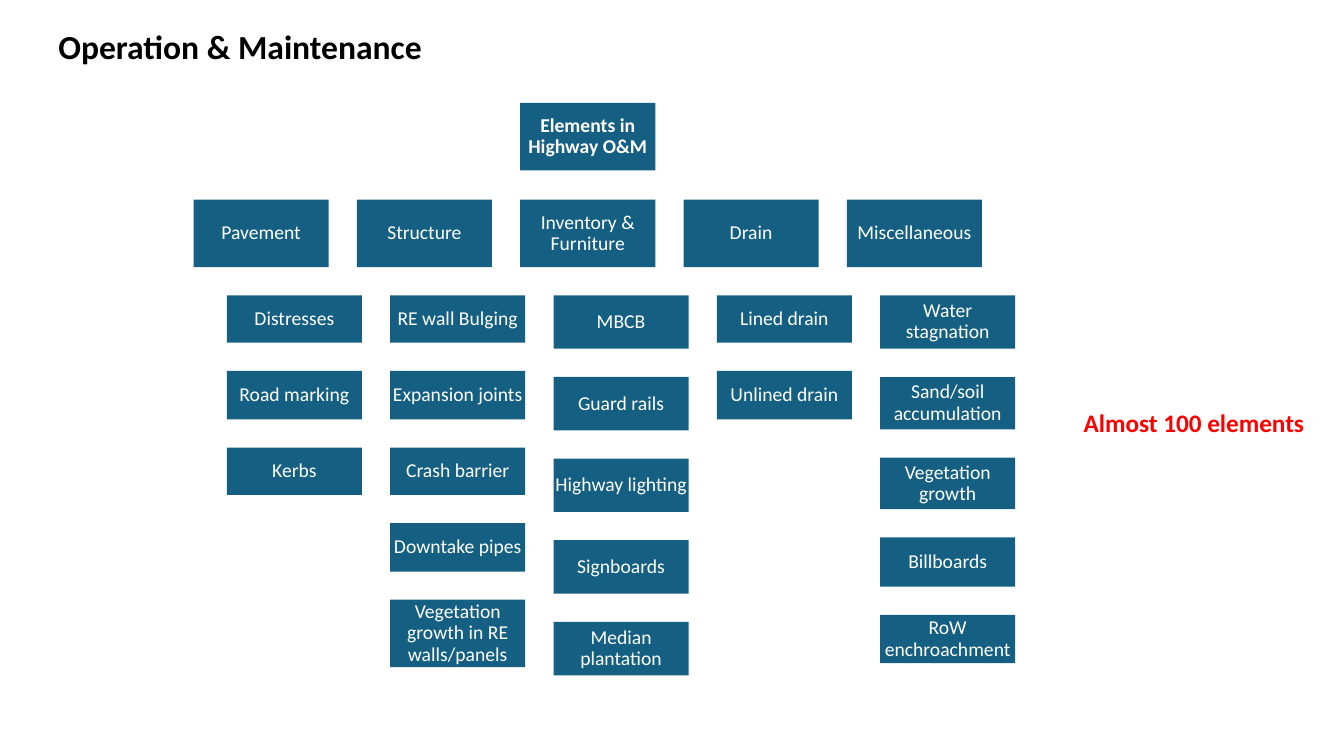
from pptx import Presentation
from pptx.dml.color import RGBColor
from pptx.enum import shapes, text
from pptx.util import Inches, Pt

BLACK = RGBColor(0x00, 0x00, 0x00)
WHITE = RGBColor(0xFF, 0xFF, 0xFF)
RED = RGBColor(0xFF, 0x00, 0x00)
TEAL = RGBColor(0x15, 0x60, 0x82)

BOX_WIDTH = 1.34
BOX_HEIGHT = 0.67
GAP = 0.28
ROOT_LEFT = 5.16
ROOT_TOP = 1.02
CHILD_INDENT = 0.33

CATEGORIES = [
    ("Pavement", [("Distresses", 0.47), ("Road marking", 0.48), ("Kerbs", 0.47)]),
    ("Structure", [
        ("RE wall Bulging", 0.47),
        ("Expansion joints", 0.48),
        ("Crash barrier", 0.47),
        ("Downtake pipes", 0.48),
        ("Vegetation growth in RE walls/panels", BOX_HEIGHT),
    ]),
    ("Inventory & Furniture", [
        ("MBCB", 0.53),
        ("Guard rails", 0.53),
        ("Highway lighting", 0.53),
        ("Signboards", 0.53),
        ("Median plantation", 0.53),
    ]),
    ("Drain", [("Lined drain", 0.47), ("Unlined drain", 0.48)]),
    ("Miscellaneous", [
        ("Water stagnation", 0.53),
        ("Sand/soil accumulation", 0.52),
        ("Vegetation growth", 0.51),
        ("Billboards", 0.49),
        ("RoW enchroachment", 0.48),
    ]),
]


def write_text(frame, wording, size=14, color=WHITE, bold=False,
               align=text.PP_ALIGN.LEFT, line_spacing=1.0):
    """Write one formatted paragraph into a text frame."""
    paragraph = frame.paragraphs[0]
    paragraph.alignment = align
    paragraph.line_spacing = line_spacing
    run = paragraph.add_run()
    run.text = wording
    run.font.name = "Calibri"
    run.font.size = Pt(size)
    run.font.bold = bold
    run.font.color.rgb = color


def add_label(slide, wording, left, top, width, height, **style):
    """Add a single-line text box."""
    frame = slide.shapes.add_textbox(
        Inches(left), Inches(top), Inches(width), Inches(height)).text_frame
    frame.word_wrap = False
    frame.auto_size = text.MSO_AUTO_SIZE.SHAPE_TO_FIT_TEXT
    write_text(frame, wording, **style)


def add_box(slide, wording, left, top, height=BOX_HEIGHT, bold=False):
    """Add a filled chart box with centred text."""
    box = slide.shapes.add_shape(
        shapes.MSO_SHAPE.RECTANGLE,
        Inches(left), Inches(top), Inches(BOX_WIDTH), Inches(height))
    box.shadow.inherit = False
    box.fill.solid()
    box.fill.fore_color.rgb = TEAL
    box.line.fill.background()
    frame = box.text_frame
    frame.word_wrap = True
    frame.vertical_anchor = text.MSO_ANCHOR.MIDDLE
    frame.margin_left = frame.margin_right = Inches(0.01)
    frame.margin_top = frame.margin_bottom = Inches(0.01)
    write_text(frame, wording, bold=bold, align=text.PP_ALIGN.CENTER,
               line_spacing=0.9)


def add_category(slide, name, elements, left, top):
    """Add a category box with its elements stacked below it."""
    add_box(slide, name, left, top)
    top += BOX_HEIGHT + GAP
    for element, height in elements:
        add_box(slide, element, left + CHILD_INDENT, top, height)
        top += height + GAP


def main():
    """Build the highway elements slide."""
    presentation = Presentation()
    presentation.slide_width = Inches(13.33)
    presentation.slide_height = Inches(7.5)
    slide = presentation.slides.add_slide(presentation.slide_layouts[6])

    add_label(slide, "Operation & Maintenance", 0.48, 0.21, 3.85, 0.5,
              size=24, color=BLACK, bold=True)
    add_box(slide, "Elements in Highway O&M", ROOT_LEFT, ROOT_TOP, bold=True)
    middle = len(CATEGORIES) // 2
    for index, (name, elements) in enumerate(CATEGORIES):
        left = ROOT_LEFT + (index - middle) * (BOX_WIDTH + GAP)
        add_category(slide, name, elements, left, ROOT_TOP + BOX_HEIGHT + GAP + 0.01)
    add_label(slide, "Almost 100 elements", 10.65, 3.99, 2.41, 0.4,
              size=18, color=RED, bold=True)

    presentation.save("out.pptx")


if __name__ == "__main__":
    main()
